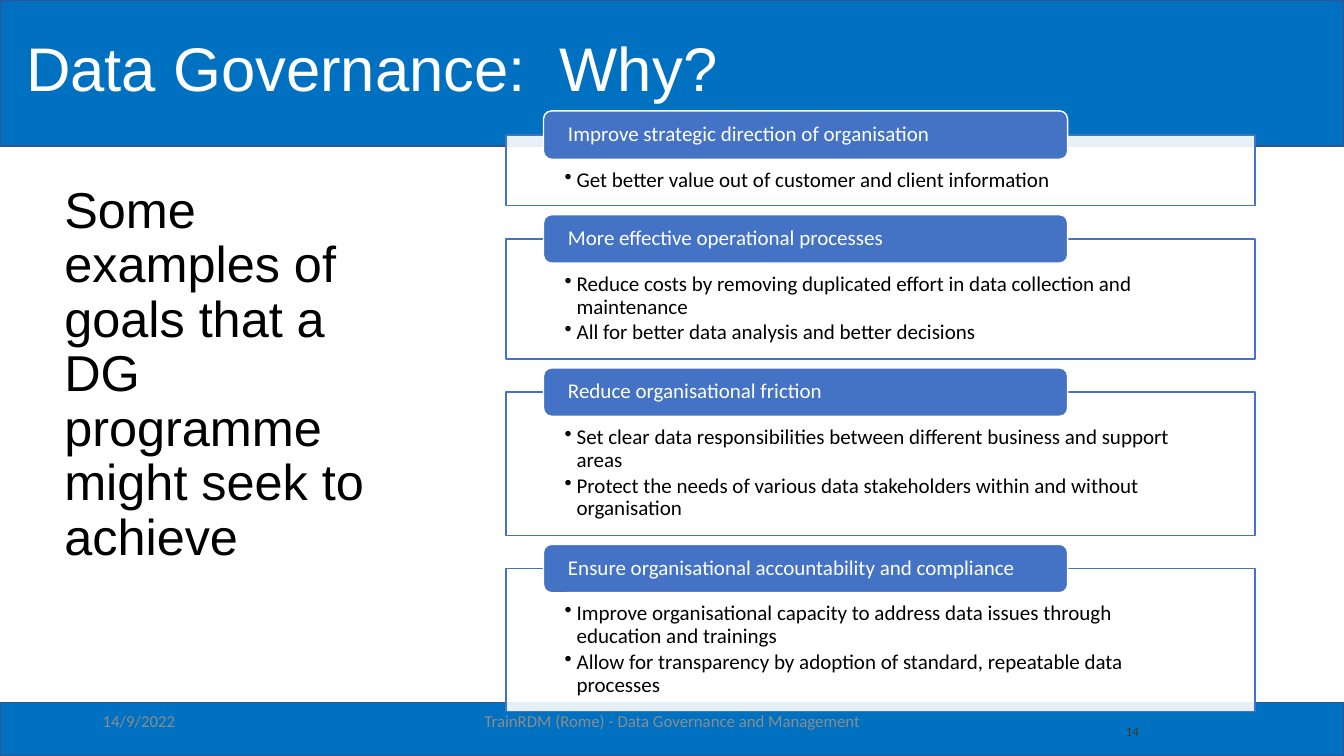
"""Build the slide on the goals of a data governance programme."""
from dataclasses import dataclass

from lxml.etree import SubElement
from pptx import Presentation
from pptx.dml.color import RGBColor
from pptx.enum.shapes import MSO_SHAPE as Shape
from pptx.enum.text import MSO_ANCHOR as Anchor, PP_ALIGN as Align
from pptx.oxml.ns import qn
from pptx.util import Inches, Pt


@dataclass(frozen=True)
class Theme:
    band: str = "0070C0"
    band_line: str = "325491"
    accent: str = "4472C4"
    white: str = "FFFFFF"
    black: str = "000000"
    footer: str = "8C8C8C"
    number: str = "413724"
    heading_font: str = "Arial"
    body_font: str = "Calibri"
    title_size: int = 44
    intro_size: int = 36
    body_size: int = 15
    footer_size: int = 12
    number_size: int = 9


COLUMNS, ROWS = 160, 90
GOALS = [
    (8.4, "Improve strategic direction of organisation",
     ["Get better value out of customer and client information"]),
    (14.28, "More effective operational processes",
     ["Reduce costs by removing duplicated effort in data collection and maintenance",
      "All for better data analysis and better decisions"]),
    (17.04, "Reduce organisational friction",
     ["Set clear data responsibilities between different business and support areas",
      "Protect the needs of various data stakeholders within and without organisation"]),
    (17.04, "Ensure organisational accountability and compliance",
     ["Improve organisational capacity to address data issues through education and trainings",
      "Allow for transparency by adoption of standard, repeatable data processes"]),
]
FIRST_PANEL_ROW, PANEL_GAP, TAB_RISE = 16.08, 3.96, 2.88


class SlideBuilder:
    """Draw styled elements on a slide divided into columns and rows."""

    def __init__(self, presentation, theme):
        self.theme = theme
        self.slide = presentation.slides.add_slide(presentation.slide_layouts[6])
        self.column = presentation.slide_width / COLUMNS
        self.row = presentation.slide_height / ROWS

    def place(self, left, top, width, height):
        return (round(left * self.column), round(top * self.row),
                round(width * self.column), round(height * self.row))

    def box(self, area, fill, line, kind=Shape.RECTANGLE, opacity=100):
        shape = self.slide.shapes.add_shape(kind, *self.place(*area))
        shape.shadow.inherit = False
        shape.fill.solid()
        shape.fill.fore_color.rgb = RGBColor.from_string(fill)
        shape.line.color.rgb = RGBColor.from_string(line)
        shape.line.width = Pt(1)
        if opacity < 100:
            color = shape.element.spPr.find(qn("a:solidFill")).find(qn("a:srgbClr"))
            SubElement(color, qn("a:alpha"), val=str(opacity * 1000))
        return shape

    def set_text(self, shape, texts, size, color, font=None, anchor=Anchor.MIDDLE,
                 align=Align.LEFT, insets=(0.1, 0.05, 0.1, 0.05), spacing=0.9,
                 after=0, bullets=False):
        frame = shape.text_frame
        frame.word_wrap = True
        frame.vertical_anchor = anchor
        (frame.margin_left, frame.margin_top,
         frame.margin_right, frame.margin_bottom) = map(Inches, insets)
        for index, text in enumerate(texts):
            paragraph = frame.add_paragraph() if index else frame.paragraphs[0]
            paragraph.text = text
            if bullets:
                properties = paragraph._p.get_or_add_pPr()
                properties.set("marL", str(Inches(0.12)))
                properties.set("indent", str(-Inches(0.12)))
                SubElement(properties, qn("a:buChar"), char="•")
            paragraph.alignment = align
            paragraph.line_spacing = spacing
            paragraph.space_after = Pt(after)
            paragraph.font.name = font or self.theme.body_font
            paragraph.font.size = Pt(size)
            paragraph.font.color.rgb = RGBColor.from_string(color)

    def text(self, area, text, size, color, **style):
        shape = self.slide.shapes.add_textbox(*self.place(*area))
        self.set_text(shape, [text], size, color, **style)

    def band(self, top, height):
        self.box((0, top, COLUMNS, height), self.theme.band, self.theme.band_line)

    def goal(self, top, height, heading, points):
        theme = self.theme
        panel = self.box((60.24, top, 89.16, height), theme.white, theme.accent, opacity=90)
        self.set_text(panel, points, theme.body_size, theme.black, anchor=Anchor.TOP,
                      insets=(0.58, 0.34, 0.58, 0.12), after=2.25, bullets=True)
        tab = self.box((64.7, top - TAB_RISE, 62.4, 5.76), theme.accent, theme.white,
                       kind=Shape.ROUNDED_RECTANGLE)
        self.set_text(tab, [heading], theme.body_size, theme.white,
                      insets=(0.22, 0, 0.22, 0))


def main():
    presentation = Presentation()
    presentation.slide_width = Inches(13.33)
    presentation.slide_height = Inches(7.5)
    theme = Theme()
    builder = SlideBuilder(presentation, theme)

    builder.band(0, 17.4)
    builder.band(83.6, 6.4)
    builder.text((6.48, 6.84, 40.44, 75.72),
                 "Some examples of goals that a DG programme might seek to achieve",
                 theme.intro_size, theme.black, font=theme.heading_font)
    builder.text((132.87, 84.72, 14.28, 4.8), "14", theme.number_size, theme.number,
                 spacing=1, after=6)

    top = FIRST_PANEL_ROW
    for height, heading, points in GOALS:
        builder.goal(top, height, heading, points)
        top += height + PANEL_GAP

    builder.text((11.04, 83.4, 36, 4.8), "14/9/2022",
                 theme.footer_size, theme.footer, spacing=1)
    builder.text((53.04, 83.4, 54, 4.8), "TrainRDM (Rome) - Data Governance and Management",
                 theme.footer_size, theme.footer, align=Align.CENTER, spacing=1)
    builder.text((1.92, -0.24, 143.52, 17.4), "Data Governance:  Why?",
                 theme.title_size, theme.white, font=theme.heading_font)
    presentation.save("out.pptx")


if __name__ == "__main__":
    main()
